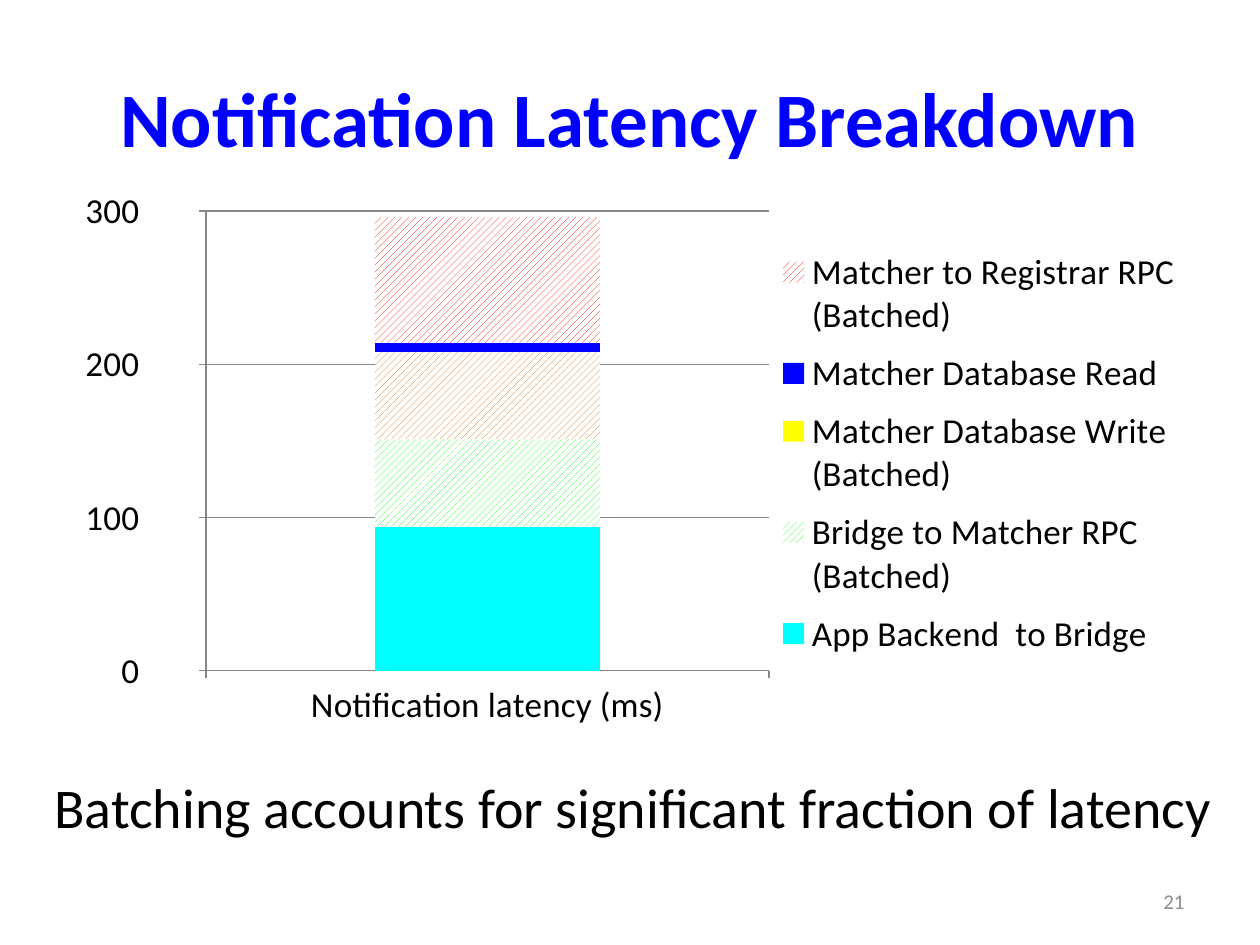
from dataclasses import dataclass

from lxml.etree import SubElement
from pptx import Presentation
from pptx.chart.data import CategoryChartData
from pptx.dml.color import RGBColor
from pptx.enum.chart import XL_CHART_TYPE, XL_LEGEND_POSITION, XL_TICK_MARK
from pptx.enum.dml import MSO_PATTERN
from pptx.enum.text import MSO_ANCHOR, PP_ALIGN
from pptx.oxml.ns import qn
from pptx.util import Pt


@dataclass(frozen=True)
class Theme:
    font: str = "Calibri"
    title_size: int = 44
    body_size: int = 32
    chart_size: int = 20
    number_size: int = 12
    blue: str = "0000FF"
    black: str = "000000"
    white: str = "FFFFFF"
    grey: str = "8C8C8C"
    line: str = "868686"
    cyan: str = "00FFFF"
    green: str = "00FF00"
    yellow: str = "FFFF00"
    orange: str = "E46C0A"
    red: str = "FF0000"


THEME = Theme()
EMU_PER_PX = 914400 / 126
SLIDE_SIZE = (1260, 945)

# text, (left, top, width, height), size, colour, bold, alignment, anchor, wrap
TEXTS = [
    ("Notification Latency Breakdown", (63, 38, 1134, 157), THEME.title_size,
     THEME.blue, True, PP_ALIGN.CENTER, MSO_ANCHOR.MIDDLE, True),
    ("Batching accounts for significant fraction of latency", (42, 766, 1196, 81),
     THEME.body_size, THEME.black, False, PP_ALIGN.LEFT, MSO_ANCHOR.TOP, False),
    ("21", (903, 876, 294, 50), THEME.number_size,
     THEME.grey, False, PP_ALIGN.RIGHT, MSO_ANCHOR.MIDDLE, True),
]

CHART_BOX = (63, 179, 1154, 559)
PLOT_BOX = (206, 211, 563, 460)
LEGEND_BOX = (769, 236, 420, 434)
CATEGORY = "Notification latency (ms)"
# name, milliseconds, series colour, series hatched, hatch colour of the bar alone
SERIES = [
    ("App Backend  to Bridge", 94, THEME.cyan, False, None),
    ("Bridge to Matcher RPC (Batched)", 57, THEME.green, True, None),
    ("Matcher Database Write (Batched)", 57, THEME.yellow, False, THEME.orange),
    ("Matcher Database Read", 6, THEME.blue, False, None),
    ("Matcher to Registrar RPC (Batched)", 82, THEME.red, True, None),
]


def px(length):
    return round(length * EMU_PER_PX)


def rgb(colour):
    return RGBColor.from_string(colour)


def set_all(target, values):
    for name, value in values.items():
        setattr(target, name, value)


def style_font(font, size, colour, bold=False):
    set_all(font, {"name": THEME.font, "size": Pt(size), "bold": bold})
    font.color.rgb = rgb(colour)


def add_text(page, text, place, size, colour, bold, alignment, anchor, wrap):
    frame = page.shapes.add_textbox(*map(px, place)).text_frame
    set_all(frame, {"word_wrap": wrap, "vertical_anchor": anchor})
    para = frame.paragraphs[0]
    para.alignment = alignment
    span = para.add_run()
    span.text = text
    style_font(span.font, size, colour, bold)


def paint(fill, colour, hatched):
    if hatched:
        fill.patterned()
        fill.pattern = MSO_PATTERN.WIDE_UPWARD_DIAGONAL
        fill.back_color.rgb = rgb(THEME.white)
    else:
        fill.solid()
    fill.fore_color.rgb = rgb(colour)


def place_part(parent, index, place, inner=False):
    """Give a chart part a manual layout, as fractions of the chart box."""
    for old in parent.findall(qn("c:layout")):
        parent.remove(old)
    layout = SubElement(parent, qn("c:layout"))
    parent.insert(index, layout)
    manual = SubElement(layout, qn("c:manualLayout"))
    left, top, width, height = CHART_BOX
    values = {
        "xMode": "edge", "yMode": "edge",
        "x": round((place[0] - left) / width, 4),
        "y": round((place[1] - top) / height, 4),
        "w": round(place[2] / width, 4),
        "h": round(place[3] / height, 4),
    }
    if inner:
        values = {"layoutTarget": "inner", **values}
    for tag, value in values.items():
        SubElement(manual, qn(f"c:{tag}")).set("val", str(value))


def style_line(line):
    line.color.rgb = rgb(THEME.line)
    line.width = Pt(0.75)


def add_latency_chart(page):
    data = CategoryChartData()
    data.categories = [CATEGORY]
    for name, value, *_ in SERIES:
        data.add_series(name, [value])
    chart = page.shapes.add_chart(
        XL_CHART_TYPE.COLUMN_STACKED, *map(px, CHART_BOX), data).chart
    set_all(chart, {"has_title": False, "has_legend": True})
    style_font(chart.font, THEME.chart_size, THEME.black)

    plot = chart.plots[0]
    set_all(plot, {"gap_width": 150, "overlap": 100, "vary_by_categories": False})
    for series, (_, _, colour, hatched, bar_colour) in zip(plot.series, SERIES):
        paint(series.format.fill, colour, hatched)
        series.invert_if_negative = False
        if bar_colour:
            paint(series.points[0].format.fill, bar_colour, True)

    value_axis = chart.value_axis
    set_all(value_axis, {"minimum_scale": 0, "maximum_scale": 300,
                         "major_unit": 100, "has_major_gridlines": True})
    set_all(value_axis.tick_labels, {"number_format": r"#\ ?/?",
                                     "number_format_is_linked": False})
    style_line(value_axis.major_gridlines.format.line)
    for axis in (value_axis, chart.category_axis):
        axis.major_tick_mark = XL_TICK_MARK.OUTSIDE
        style_line(axis.format.line)

    set_all(chart.legend, {"position": XL_LEGEND_POSITION.RIGHT,
                           "include_in_layout": False})
    legend = chart.element.find(".//" + qn("c:legend"))
    place_part(legend, 1, LEGEND_BOX)
    place_part(chart.element.find(".//" + qn("c:plotArea")), 0, PLOT_BOX, inner=True)


def main():
    deck = Presentation()
    deck.slide_width, deck.slide_height = map(px, SLIDE_SIZE)
    page = deck.slides.add_slide(deck.slide_layouts[6])
    add_latency_chart(page)
    for text in TEXTS:
        add_text(page, *text)
    deck.save("out.pptx")


if __name__ == "__main__":
    main()
